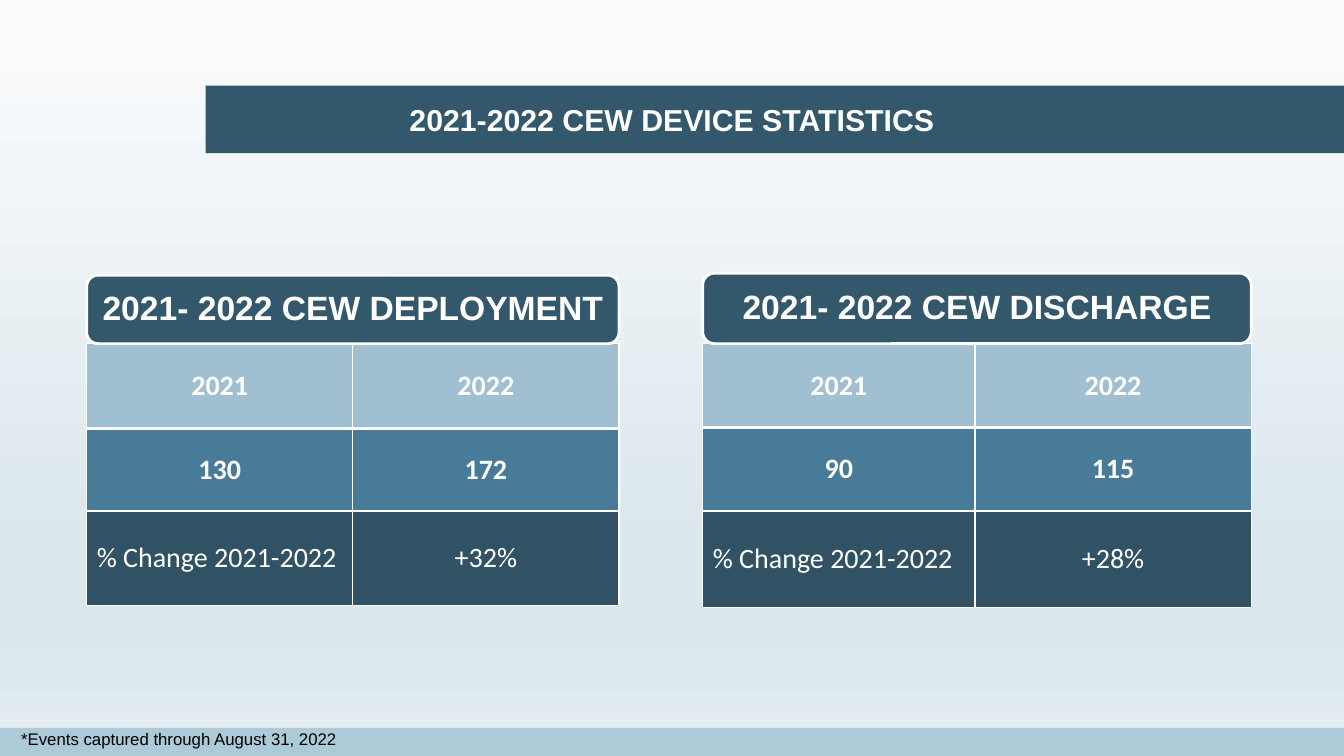
from pptx import Presentation
from pptx.dml.color import RGBColor
from pptx.enum.shapes import MSO_SHAPE as Shape
from pptx.enum.text import MSO_ANCHOR as Anchor, PP_ALIGN as Align
from pptx.oxml.ns import qn
from pptx.util import Inches, Pt
from lxml.etree import SubElement

WHITE = "FFFFFF"
NAVY = "33576B"
ROW_FILLS = ["A0C0D2", "487B97", "305264"]
SKY = [(0, "FBFCFD"), (74, "DAE7ED"), (83, "DAE7ED"), (100, "E6EFF3")]


def color(value):
    return RGBColor.from_string(value)


def write(frame, text, size=20, font="Arial", ink=WHITE, bold=True,
          align=Align.CENTER, anchor=Anchor.MIDDLE, inset=0, spacing=None):
    frame.word_wrap = True
    frame.vertical_anchor = anchor
    frame.margin_left = frame.margin_right = Inches(inset)
    frame.margin_top = frame.margin_bottom = Inches(inset)
    paragraph = frame.paragraphs[0]
    paragraph.alignment = align
    paragraph.line_spacing = spacing
    run = paragraph.add_run()
    run.text = text
    run.font.size = Pt(size)
    run.font.name = font
    run.font.bold = bold
    run.font.color.rgb = color(ink)


def panel(slide, kind, box, fill, line=None):
    block = slide.shapes.add_shape(kind, *map(Inches, box))
    block.shadow.inherit = False
    block.fill.solid()
    block.fill.fore_color.rgb = color(fill)
    if line:
        block.line.color.rgb = color(line)
        block.line.width = Pt(2)
    else:
        block.line.fill.background()
    return block


def paint_background(slide):
    fill = slide.background.fill
    fill.gradient()
    fill.gradient_angle = 270
    stops = next(slide.element.iter(qn("a:gsLst")))
    stops.clear()
    for percent, shade in SKY:
        stop = SubElement(stops, qn("a:gs"), pos=str(percent * 1000))
        SubElement(stop, qn("a:srgbClr"), val=shade)


def title_band(slide, left, top, width, height):
    band = panel(slide, Shape.RECTANGLE, (left, top, width, height), NAVY)
    title = slide.shapes.title
    title.left, title.top = Inches(0), Inches(top)
    title.width, title.height = Inches(left + width), Inches(height)
    write(title.text_frame, "2021-2022 CEW DEVICE STATISTICS", size=21.6)
    band.element.addnext(title.element)


def footer_band(slide, left, top, width, height):
    panel(slide, Shape.RECTANGLE, (left, top, width, height), "ACCAD8")
    note = slide.shapes.add_textbox(Inches(left + 0.21), Inches(top + 0.01),
                                    Inches(3.95), Inches(0.2))
    write(note.text_frame, "*Events captured through August 31, 2022", size=12,
          ink="000000", bold=False, align=Align.LEFT, anchor=Anchor.TOP)


def border_cell(cell, **widths):
    properties = cell._tc.get_or_add_tcPr()
    for side in "LRTB":
        edge = SubElement(properties, qn("a:ln" + side),
                          w=str(Pt(widths.get(side, 1))))
        solid = SubElement(edge, qn("a:solidFill"))
        SubElement(solid, qn("a:srgbClr"), val=WHITE)


def statistics(slide, left, top, columns, rows, heading, heading_height, values):
    width = sum(columns)
    grid = slide.shapes.add_table(len(rows), len(columns), Inches(left), Inches(top),
                                  Inches(width), Inches(sum(rows))).table
    grid.first_row = grid.horz_banding = False
    for column, size in zip(grid.columns, columns):
        column.width = Inches(size)
    edges = [{"B": 3}, {"T": 3}, {}]
    for r, (height, fill, edge) in enumerate(zip(rows, ROW_FILLS, edges)):
        grid.rows[r].height = Inches(height)
        for c, value in enumerate(values[r]):
            cell = grid.cell(r, c)
            border_cell(cell, **edge)
            cell.fill.solid()
            cell.fill.fore_color.rgb = color(fill)
            cell.vertical_anchor = Anchor.MIDDLE
            label = value.startswith("%")
            write(cell.text_frame, value, font="Calibri", bold=r < 2, inset=0.1,
                  align=Align.LEFT if label else Align.CENTER)
    header = panel(slide, Shape.ROUNDED_RECTANGLE,
                   (left, top - heading_height, width, heading_height), NAVY, WHITE)
    write(header.text_frame, heading, size=24, inset=0.1, spacing=0.9)


def main():
    deck = Presentation()
    deck.slide_width, deck.slide_height = Inches(13.33), Inches(7.5)
    slide = deck.slides.add_slide(deck.slide_layouts[5])
    paint_background(slide)
    title_band(slide, 2.04, 0.85, 11.29, 0.67)
    footer_band(slide, 0, 7.22, 13.33, 0.28)
    years = ["2021", "2022"]
    change = "% Change 2021-2022"
    statistics(slide, 0.86, 3.41, [2.64, 2.64], [0.84, 0.82, 0.94],
               "2021- 2022 CEW DEPLOYMENT", 0.68,
               [years, ["130", "172"], [change, "+32%"]])
    statistics(slide, 6.97, 3.41, [2.7, 2.74], [0.83, 0.83, 0.96],
               "2021- 2022 CEW DISCHARGE", 0.7,
               [years, ["90", "115"], [change, "+28%"]])
    deck.save("out.pptx")


if __name__ == "__main__":
    main()
